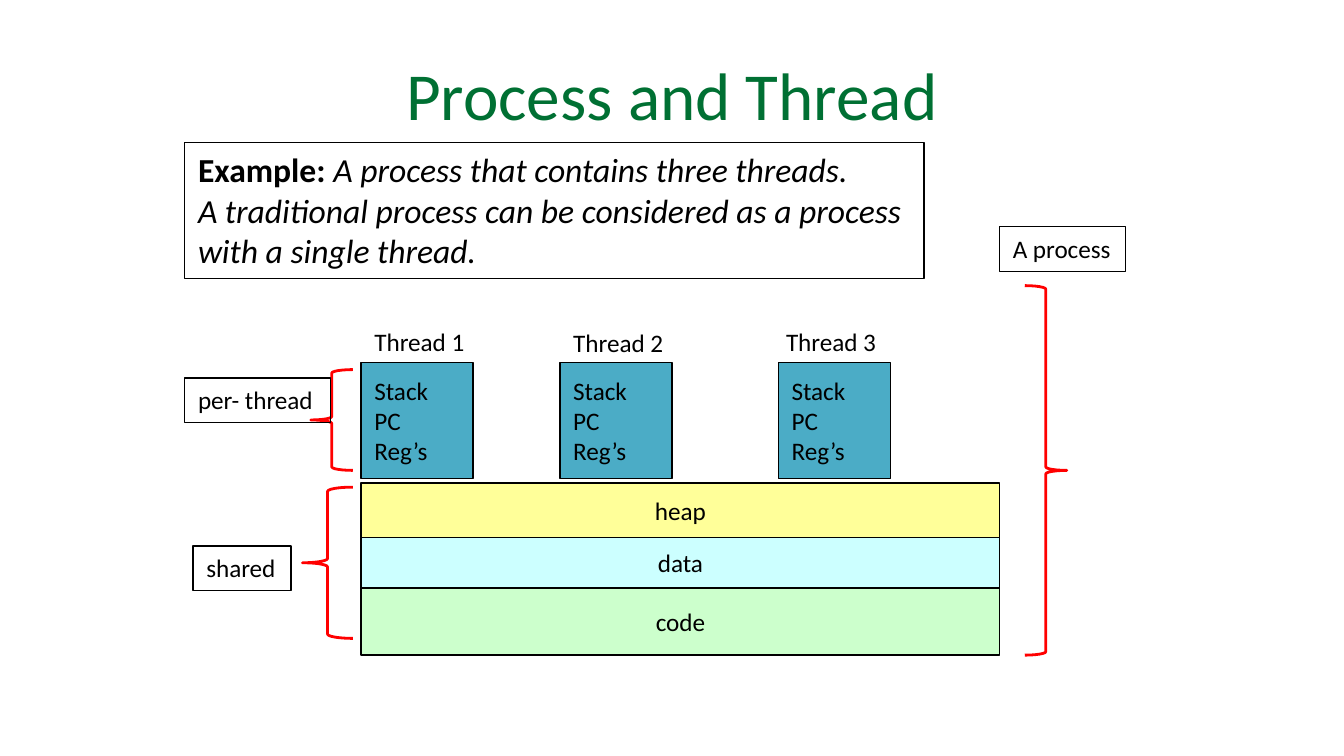
from dataclasses import dataclass
from typing import Optional

from pptx import Presentation
from pptx import util as u
from pptx.dml.color import RGBColor
from pptx.enum import shapes, text

PX = u.Inches(1) // 96
COLORS = {
    "title": "007033", "ink": "000000", "brace": "FF0000", "thread": "4BACC6",
    "heap": "FFFF99", "data": "CCFFFF", "code": "CCFFCC",
}
FONT = "Calibri"
LABEL_SIZE = 13.5
SEGMENT_LEFT, SEGMENT_WIDTH = 258, 456
THREAD_STATE = (("Stack",), ("PC",), ("Reg’s",))


@dataclass(frozen=True)
class Area:
    left: int
    top: int
    width: int
    height: int

    def emu(self) -> list[int]:
        return [side * PX for side in (self.left, self.top, self.width, self.height)]


@dataclass(frozen=True)
class Segment:
    name: str
    top: int
    height: int


@dataclass(frozen=True)
class Thread:
    name: str
    label_left: int
    label_top: int
    state_left: int


@dataclass(frozen=True)
class Note:
    words: str
    area: Area


@dataclass(frozen=True)
class Brace:
    kind: shapes.MSO_SHAPE
    area: Area


SEGMENTS = (Segment("code", 420, 48), Segment("data", 384, 36), Segment("heap", 345, 39))
THREADS = (
    Thread("Thread 1", 258, 228, 258),
    Thread("Thread 2", 400, 229, 400),
    Thread("Thread 3", 552, 228, 556),
)
NOTES = (
    Note("shared", Area(138, 390, 70, 32)),
    Note("per- thread", Area(132, 270, 104, 32)),
    Note("A process", Area(714, 162, 90, 32)),
)
BRACES = (
    Brace(shapes.MSO_SHAPE.LEFT_BRACE, Area(216, 348, 36, 108)),
    Brace(shapes.MSO_SHAPE.LEFT_BRACE, Area(222, 264, 30, 72)),
    Brace(shapes.MSO_SHAPE.RIGHT_BRACE, Area(732, 204, 30, 264)),
)
EXAMPLE = (
    ("Example: ", "A process that contains three threads."),
    ("A traditional process can be considered as a process",),
    ("with a single thread.",),
)


def rgb(name: str) -> RGBColor:
    return RGBColor.from_string(COLORS[name])


def apply(target, formats: dict) -> None:
    for key, value in formats.items():
        setattr(target, key, value)


def style_run(run, size: float, color: str = "ink") -> None:
    apply(run.font, {"name": FONT, "size": u.Pt(size)})
    run.font.color.rgb = rgb(color)


def write(shape, lines, size: float = LABEL_SIZE, align=text.PP_ALIGN.LEFT,
          grow: bool = False) -> list:
    frame = shape.text_frame
    apply(frame, {
        "word_wrap": False,
        "auto_size": text.MSO_AUTO_SIZE.SHAPE_TO_FIT_TEXT if grow else text.MSO_AUTO_SIZE.NONE,
        "vertical_anchor": text.MSO_ANCHOR.TOP if grow else text.MSO_ANCHOR.MIDDLE,
    })
    runs = []
    for index, line in enumerate(lines):
        paragraph = frame.add_paragraph() if index else frame.paragraphs[0]
        paragraph.alignment = align
        for words in line:
            run = paragraph.add_run()
            run.text = words
            style_run(run, size)
            runs.append(run)
    return runs


def draw_shape(canvas, kind: shapes.MSO_SHAPE, area: Area, fill: Optional[str] = None,
               line: str = "ink", weight: float = 0.75):
    shape = canvas.add_shape(kind, *area.emu())
    shape.shadow.inherit = False
    if fill:
        shape.fill.solid()
        shape.fill.fore_color.rgb = rgb(fill)
    else:
        shape.fill.background()
    shape.line.color.rgb = rgb(line)
    shape.line.width = u.Pt(weight)
    return shape


def draw_box(canvas, area: Area, fill: Optional[str] = None):
    return draw_shape(canvas, shapes.MSO_SHAPE.RECTANGLE, area, fill)


def draw_title(slide, words: str) -> None:
    title = slide.shapes.title
    left, top, width, height = Area(48, 22, 864, 90).emu()
    apply(title, {"left": left, "top": top, "width": width, "height": height})
    apply(title.text_frame, {"auto_size": text.MSO_AUTO_SIZE.NONE,
                             "vertical_anchor": text.MSO_ANCHOR.MIDDLE})
    paragraph = title.text_frame.paragraphs[0]
    paragraph.alignment = text.PP_ALIGN.CENTER
    run = paragraph.add_run()
    run.text = words
    style_run(run, 36, "title")


def draw_segments(canvas) -> None:
    memory = canvas.add_group_shape()
    for segment in SEGMENTS:
        area = Area(SEGMENT_LEFT, segment.top, SEGMENT_WIDTH, segment.height)
        box = draw_box(memory.shapes, area, segment.name)
        write(box, [(segment.name,)], align=text.PP_ALIGN.CENTER)


def draw_thread(canvas, thread: Thread) -> None:
    write(draw_box(canvas, Area(thread.state_left, 259, 80, 83), "thread"), THREAD_STATE)
    label = canvas.add_textbox(*Area(thread.label_left, thread.label_top, 84, 32).emu())
    write(label, [(thread.name,)], grow=True)


def draw_example(canvas) -> None:
    lead, *rest = write(draw_box(canvas, Area(132, 102, 528, 97)), EXAMPLE, 18, grow=True)
    lead.font.bold = True
    for run in rest:
        run.font.italic = True


def main() -> None:
    deck = Presentation()
    apply(deck, {"slide_width": 960 * PX, "slide_height": 540 * PX})
    slide = deck.slides.add_slide(deck.slide_layouts[5])
    canvas = slide.shapes
    draw_title(slide, "Process and Thread")
    draw_segments(canvas)
    for thread in THREADS:
        draw_thread(canvas, thread)
    for brace in BRACES:
        draw_shape(canvas, brace.kind, brace.area, line="brace", weight=1.5)
    for note in NOTES:
        write(draw_box(canvas, note.area), [(note.words,)], grow=True)
    draw_example(canvas)
    deck.save("out.pptx")


if __name__ == "__main__":
    main()
